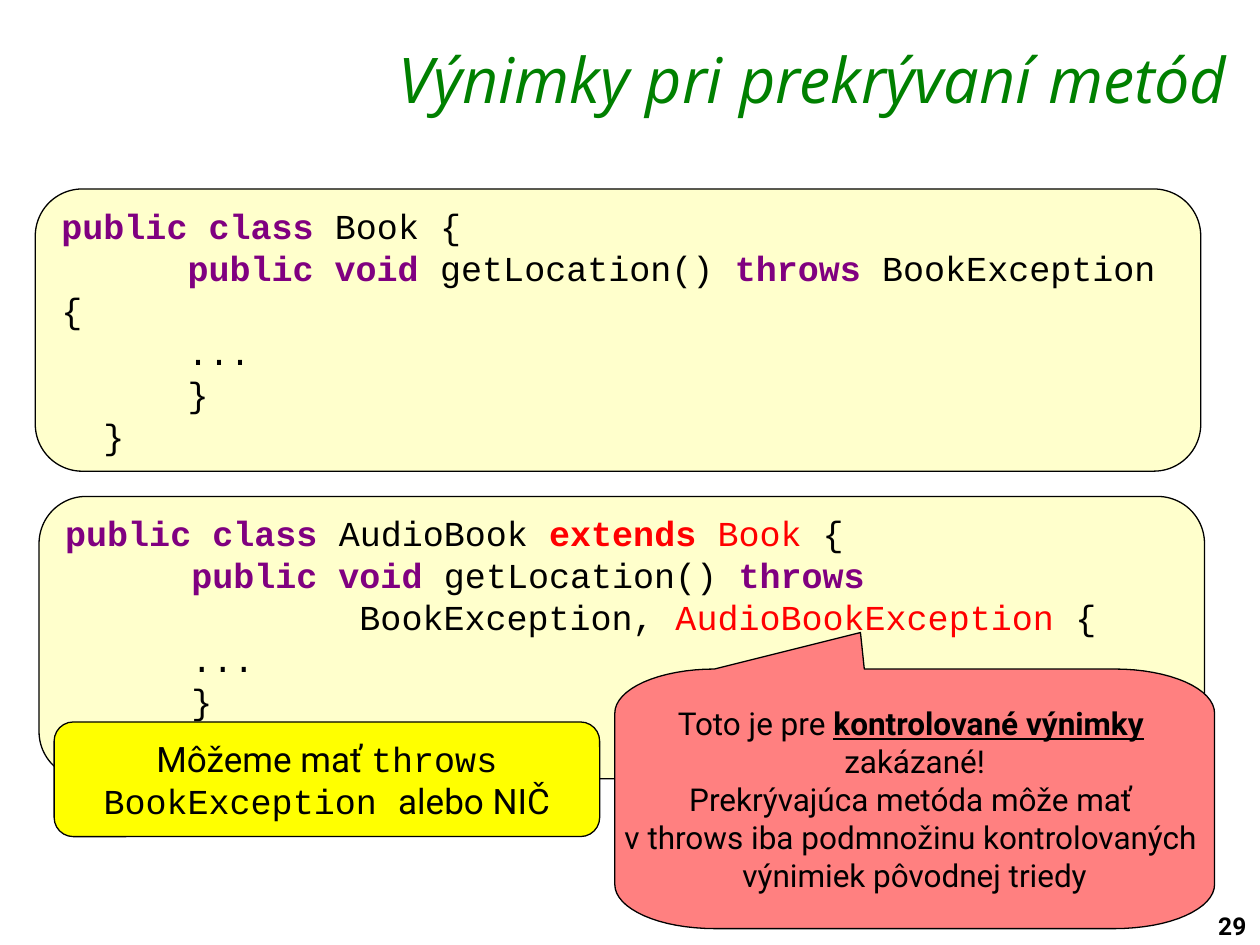
import math
from pptx import Presentation
from pptx import util as u
from pptx.dml.color import RGBColor
from pptx.enum import shapes, text

BLACK = RGBColor(0, 0, 0)
GREEN = RGBColor(0, 128, 0)
PURPLE = RGBColor(128, 0, 128)
RED = RGBColor(255, 0, 0)
CREAM = RGBColor(255, 255, 204)
PINK = RGBColor(255, 128, 128)
YELLOW = RGBColor(255, 255, 0)

MONO, SANS, HEAD = "Courier New", "Roboto", "Open Sans"
PLAIN = {"font": MONO}
KEY = {"font": MONO, "color": PURPLE, "bold": True}
NEW = {"font": MONO, "color": RED}
NEW_KEY = {**NEW, "bold": True}
PROSE = {"font": SANS}
STRONG = {"font": SANS, "bold": True, "underline": True}

TITLE = "Výnimky pri prekrývaní metód"
PAGE_NUMBER = "29"
INDENT = " " * 6
CLASS_END = [[(INDENT + "...", PLAIN)], [(INDENT + "}", PLAIN)], [("  }", PLAIN)]]
BOOK = [
    [("public class", KEY), (" Book {", PLAIN)],
    [(INDENT + "public void ", KEY), ("getLocation() ", PLAIN),
     ("throws ", KEY), ("BookException {", PLAIN)],
] + CLASS_END
AUDIO_BOOK = [
    [("public class ", KEY), ("AudioBook ", PLAIN), ("extends", NEW_KEY),
     (" Book", NEW), (" {", PLAIN)],
    [(INDENT + "public void ", KEY), ("getLocation() ", PLAIN), ("throws", KEY)],
    [(" " * 14 + "BookException, ", PLAIN), ("AudioBookException", NEW), (" {", PLAIN)],
] + CLASS_END
WARNING = [
    [("Toto je pre ", PROSE), ("kontrolované", STRONG), (" ", STRONG),
     ("výnimky", STRONG), (" \nzakázané!", PROSE)],
    [("Prekrývajúca metóda môže mať \nv throws iba podmnožinu kontrolovaných \n"
      "výnimiek pôvodnej triedy", PROSE)],
]
ADVICE = [
    [("Môžeme mať ", PROSE), ("throws", PLAIN)],
    [("BookException ", PLAIN), ("alebo NIČ", PROSE)],
]

CODE_BOXES = [(0.28, 1.5, BOOK), (0.31, 3.94, AUDIO_BOOK)]
CODE_SIZE = (9.25, 2.24)
ADVICE_PLACE = (0.43, 5.73, 4.33, 0.91)
CALLOUT = (4.88, 5.31, 4.76, 2.06)
CORNER = (0.79, 0.35)
TAIL_TIP = (6.83, 5.02)
TAIL_END = 6.86
ARC_STEPS = 16


def add_span(para, words, size, font=SANS, color=BLACK, bold=False,
             underline=False, italic=False):
    for number, line in enumerate(words.split("\n")):
        if number:
            para.add_line_break()
        span = para.add_run()
        span.text = line
        span.font.name = font
        span.font.size = u.Pt(size)
        span.font.color.rgb = color
        span.font.bold = bold
        span.font.underline = underline
        span.font.italic = italic


def fill_text(box, paragraphs, size, align, spacing=None, wrap=True):
    frame = box.text_frame
    frame.word_wrap = wrap
    frame.vertical_anchor = text.MSO_ANCHOR.MIDDLE
    for number, spans in enumerate(paragraphs):
        para = frame.add_paragraph() if number else frame.paragraphs[0]
        para.alignment = align
        if spacing:
            para.line_spacing = u.Pt(spacing)
        for words, style in spans:
            add_span(para, words, size, **style)


def paint(shape, color):
    shape.shadow.inherit = False
    shape.fill.solid()
    shape.fill.fore_color.rgb = color
    shape.line.color.rgb = BLACK
    shape.line.width = u.Pt(0)


def add_rounded(page, place, color):
    box = page.shapes.add_shape(shapes.MSO_SHAPE.ROUNDED_RECTANGLE, *map(u.Inches, place))
    paint(box, color)
    return box


def add_callout(page):
    left, top, width, height = CALLOUT
    across, down = CORNER
    near_x, far_x = left + across, left + width - across
    near_y, far_y = top + down, top + height - down
    centres = [(far_x, near_y), (far_x, far_y), (near_x, far_y), (near_x, near_y)]
    outline = [TAIL_TIP, (TAIL_END, top)]
    for quarter, (x, y) in enumerate(centres):
        for step in range(ARC_STEPS + 1):
            angle = math.pi / 2 * (quarter - 1 + step / ARC_STEPS)
            outline.append((x + across * math.cos(angle), y + down * math.sin(angle)))
    points = [(u.Inches(x), u.Inches(y)) for x, y in outline]
    builder = page.shapes.build_freeform(*points[0])
    builder.add_line_segments(points[1:], close=True)
    box = builder.convert_to_shape()
    paint(box, PINK)
    box.text_frame.margin_top = u.Inches(top - TAIL_TIP[1] + 0.05)
    return box


def main():
    deck = Presentation()
    deck.slide_width, deck.slide_height = u.Inches(10), u.Inches(7.5)
    page = deck.slides.add_slide(deck.slide_layouts[5])

    title = page.shapes.title
    title.left, title.top, title.width, title.height = map(u.Inches, (1.76, 0.33, 8.08, 0.58))
    heading = {"font": HEAD, "color": GREEN, "italic": True}
    fill_text(title, [[(TITLE, heading)]], 36, text.PP_ALIGN.RIGHT)

    for left, top, code in CODE_BOXES:
        box = add_rounded(page, (left, top, *CODE_SIZE), CREAM)
        fill_text(box, code, 20, text.PP_ALIGN.LEFT, spacing=24)

    fill_text(add_callout(page), WARNING, 18, text.PP_ALIGN.CENTER, wrap=False)
    fill_text(add_rounded(page, ADVICE_PLACE, YELLOW), ADVICE, 20, text.PP_ALIGN.CENTER)

    number = page.shapes.add_textbox(*map(u.Inches, (9.57, 7.18, 0.51, 0.33)))
    fill_text(number, [[(PAGE_NUMBER, {"bold": True})]], 14, text.PP_ALIGN.LEFT, wrap=False)

    deck.save("out.pptx")


if __name__ == "__main__":
    main()
